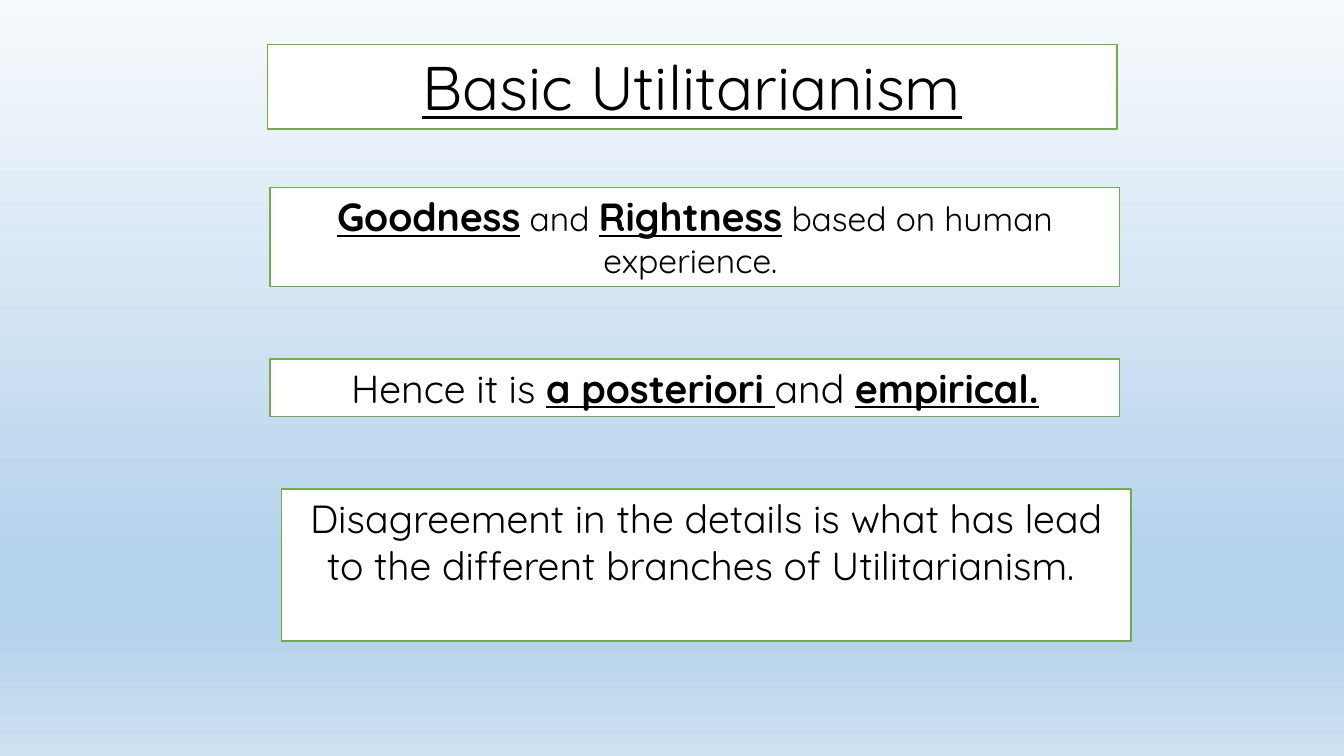
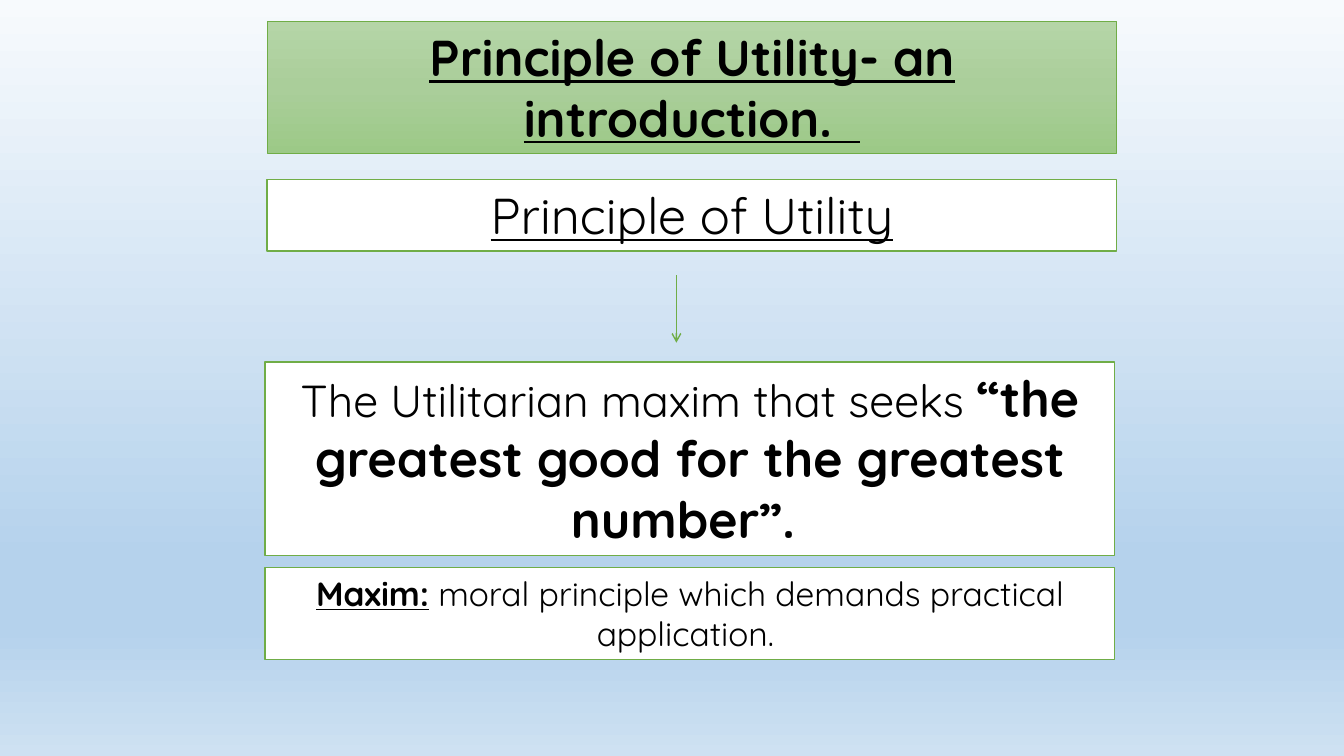
from lxml.etree import SubElement
from pptx import Presentation
from pptx.dml.color import RGBColor
from pptx.enum.shapes import MSO_CONNECTOR
from pptx.enum.text import MSO_ANCHOR, MSO_AUTO_SIZE, PP_ALIGN
from pptx.oxml.ns import qn
from pptx.util import Inches, Pt

FONT = "Quicksand"
INK, PAPER, GREEN = "000000", "FFFFFF", "70AD47"
SKY = [(0, "F7FAFD"), (74, "B5D2EC"), (83, "B5D2EC"), (100, "CEE1F2")]
LEAF = [(0, "B5D5A7"), (50, "AACE9A"), (100, "9CC987")]
WIDE = 63.22  # shared box width, percent of the slide


def color(code):
    return RGBColor.from_string(code)


def blend(fill, root, stops):
    """Give a fill a downward gradient of (percent, colour) stops."""
    fill.gradient()
    fill.gradient_angle = 270
    slot = next(root.iter(qn("a:gsLst")))
    for old in list(slot):
        slot.remove(old)
    for share, code in stops:
        stop = SubElement(slot, qn("a:gs"), pos=str(share * 1000))
        SubElement(stop, qn("a:srgbClr"), val=code)


class Deck:
    """Holds the style and the current slide; lengths are slide percents."""

    def __init__(self):
        self.file = Presentation()
        self.file.slide_width = Inches(13.333)
        self.file.slide_height = Inches(7.5)
        # Background shared by all slides
        master = self.file.slide_master
        ground = master.background.fill
        blend(ground, master.element.cSld, SKY)

    def across(self, share):
        return round(self.file.slide_width * share / 100)

    def down(self, share):
        return round(self.file.slide_height * share / 100)

    def start(self):
        self.slide = self.file.slides.add_slide(self.file.slide_layouts[5])

    def style(self, shape, left, top, high, runs, stops=None, edge=1):
        """Place and format a framed text; runs are (text, size, marks)."""
        shape.left, shape.top = self.across(left), self.down(top)
        shape.width, shape.height = self.across(WIDE), self.down(high)
        if stops:
            blend(shape.fill, shape.element.spPr, stops)
        else:
            shape.fill.solid()
            shape.fill.fore_color.rgb = color(PAPER)
        shape.line.color.rgb = color(GREEN)
        shape.line.width = Pt(edge)
        frame = shape.text_frame
        frame.word_wrap = True
        frame.auto_size = MSO_AUTO_SIZE.SHAPE_TO_FIT_TEXT
        frame.vertical_anchor = MSO_ANCHOR.TOP
        para = frame.paragraphs[0]
        para.alignment = PP_ALIGN.CENTER
        for text, size, marks in runs:
            run = para.add_run()
            run.text = text
            font = run.font
            font.name, font.size = FONT, Pt(size)
            font.bold, font.underline = "b" in marks, "u" in marks
            font.color.rgb = color(INK)

    def title(self, *place, **look):
        self.style(self.slide.shapes.title, *place, **look)

    def box(self, *place):
        self.style(self.slide.shapes.add_textbox(0, 0, 0, 0), *place)

    def arrow(self, left, top, end):
        line = self.slide.shapes.add_connector(
            MSO_CONNECTOR.STRAIGHT, self.across(left), self.down(top),
            self.across(left), self.down(end))
        line.line.color.rgb = color(GREEN)
        line.line.width = Pt(1)
        SubElement(line.line._get_or_add_ln(), qn("a:tailEnd"), type="arrow")
        SubElement(line.element.spPr, qn("a:effectLst"))


def main():
    deck = Deck()

    # Basic ideas
    deck.start()
    deck.title(19.88, 5.87, 11.2, [("Basic Utilitarianism", 44, "u")])
    deck.box(20.1, 24.8, 13.07, [
        ("Goodness", 28, "bu"), (" and ", 24, ""), ("Rightness", 28, "bu"),
        (" based on human experience. ", 24, "")])
    deck.box(20.1, 47.47, 7.6, [
        ("Hence it is ", 28, ""), ("a posteriori ", 28, "bu"),
        ("and ", 28, ""), ("empirical.", 28, "bu")])
    deck.box(20.93, 64.67, 20.13, [
        ("Disagreement in the details is what has lead to the different "
         "branches of Utilitarianism. ", 28, "")])

    # Principle and its maxim
    deck.start()
    deck.title(19.88, 2.8, 17.47,
               [("Principle of Utility- an introduction.  ", 36, "bu")],
               stops=LEAF, edge=0.5)
    deck.box(19.88, 23.73, 9.47, [("Principle of Utility", 36, "u")])
    deck.arrow(50.33, 36.4, 45.33)
    deck.box(19.73, 47.87, 25.6, [
        ("The Utilitarian maxim that seeks ", 32, ""),
        ("“the greatest good for the greatest number”. ", 36, "b")])
    deck.box(19.73, 75.07, 12.13, [
        ("Maxim:", 24, "bu"),
        (" moral principle which demands practical application. ", 24, "")])

    deck.file.save("out.pptx")


if __name__ == "__main__":
    main()
